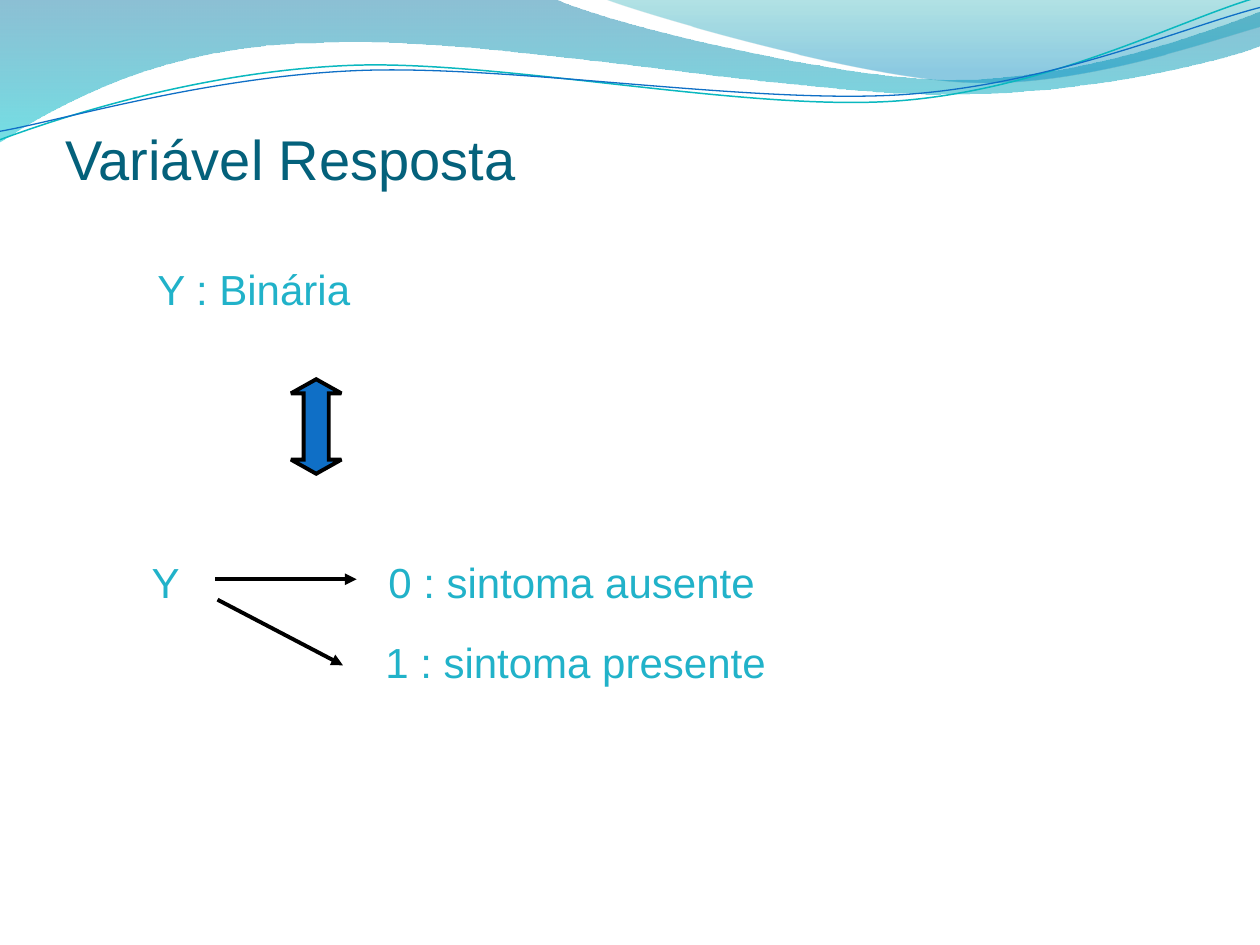
from dataclasses import dataclass

from lxml.etree import SubElement
from pptx import Presentation
from pptx.dml.color import RGBColor
from pptx.enum.shapes import MSO_CONNECTOR, MSO_SHAPE
from pptx.oxml.ns import qn
from pptx.util import Pt

Point = tuple[float, float]
Segment = tuple[Point, ...]  # one point: straight; three points: cubic curve


@dataclass(frozen=True)
class Theme:
    font: str = "Arial"
    title_size: float = 32
    body_size: float = 24
    title: str = "04617B"
    body: str = "21B2C9"
    blue: str = "0F6FC6"
    teal: str = "0AB8BF"
    ink: str = "000000"
    stroke: float = 2.25


@dataclass(frozen=True)
class Stop:
    position: float
    color: str
    opacity: int  # percent


@dataclass(frozen=True)
class Band:
    start: Point
    segments: tuple[Segment, ...]
    stops: tuple[Stop, Stop]


@dataclass(frozen=True)
class Wave:
    start: Point
    segments: tuple[Segment, ...]
    color: str
    width: float
    rotation: float = 357.3


THEME = Theme()

BANDS = (
    Band((0, -0.7), (
        ((316.8, -0.7),),
        ((342.7, 12.2), (478.1, 45.4), (545.8, 45.4)),
        ((614.2, 45.4), (689.8, 18.7), (720, 6.5)),
        ((720.7, 25.9),),
        ((707.8, 31.7), (626.4, 54.7), (537.1, 54)),
        ((447.8, 54), (275, 20.2), (185, 24.5)),
        ((92.9, 25.2), (33.1, 59.8), (-0.7, 81.4)),
    ), (Stop(0, "0074A1", 45), Stop(1, "00C6CF", 55))),
    Band((344.9, -0.7), (
        ((366.5, 7.9), (491, 44.6), (553.7, 46.8)),
        ((616.3, 49.7), (691.9, 23), (720, 15.1)),
        ((720, 0),),
    ), (Stop(0, "00A1A9", 30), Stop(0.8, "008BBF", 45))),
)

WAVES = (
    Wave((-1.4, 62.9), (
        ((33.8, 51.7), (114.1, 29.4), (199.8, 29.9)),
        ((284.9, 30.3), (425.8, 67.3), (512.4, 64.9)),
        ((599, 62.4), (676.5, 25.7), (720.2, 15.5)),
    ), THEME.teal, 0.85),
    Wave((-1.1, 58), (
        ((32.9, 53.8), (118.3, 32.5), (204.1, 33)),
        ((290.6, 33.4), (428.9, 63.1), (515.5, 61.4)),
        ((601.3, 59.6), (678.4, 30.1), (721.4, 21.3)),
    ), THEME.blue, 0.75),
)


def rgb(color: str) -> RGBColor:
    return RGBColor.from_string(color)


def add_outline(page, start: Point, segments: tuple[Segment, ...], close: bool):
    """Lay out every point as a line, then fold each group of three into a cubic curve."""
    builder = page.shapes.build_freeform(Pt(start[0]), Pt(start[1]), scale=1.0)
    points = [(Pt(x), Pt(y)) for segment in segments for x, y in segment]
    builder.add_line_segments(points, close=close)
    shape = builder.convert_to_shape()
    shape.shadow.inherit = False
    lines = iter(list(shape._element.spPr.iter(qn("a:lnTo"))))
    for segment in segments:
        group = [next(lines) for _ in segment]
        if len(group) == 3:
            group[0].tag = qn("a:cubicBezTo")
            for line in group[1:]:
                group[0].append(line[0])
                line.getparent().remove(line)
    return shape


def add_band(page, band: Band) -> None:
    shape = add_outline(page, band.start, band.segments, close=True)
    shape.line.fill.background()
    shape.fill.gradient()
    shape.fill.gradient_angle = 270
    for target, stop in zip(shape.fill.gradient_stops, band.stops):
        target.position = stop.position
        target.color.rgb = rgb(stop.color)
    colors = shape._element.spPr.iter(qn("a:srgbClr"))
    for color, stop in zip(list(colors), band.stops):
        SubElement(color, qn("a:alpha"), val=str(stop.opacity * 1000))


def add_wave(page, wave: Wave) -> None:
    shape = add_outline(page, wave.start, wave.segments, close=False)
    shape.rotation = wave.rotation
    shape.fill.background()
    shape.line.color.rgb = rgb(wave.color)
    shape.line.width = Pt(wave.width)


def add_text(page, text: str, *, left: float, top: float, width: float, height: float = 36,
             size: float = THEME.body_size, color: str = THEME.body,
             tab: float | None = None) -> None:
    box = page.shapes.add_textbox(Pt(left), Pt(top), Pt(width), Pt(height))
    frame = box.text_frame
    frame.word_wrap = True
    para = frame.paragraphs[0]
    if tab is not None:
        tabs = SubElement(para._p.get_or_add_pPr(), qn("a:tabLst"))
        SubElement(tabs, qn("a:tab"), pos=str(Pt(tab)), algn="l")
    span = para.add_run()
    span.text = text
    span.font.name = THEME.font
    span.font.size = Pt(size)
    span.font.color.rgb = rgb(color)


def add_arrow(page, start: Point, end: Point) -> None:
    arrow = page.shapes.add_connector(MSO_CONNECTOR.STRAIGHT, *map(Pt, start + end))
    arrow.line.color.rgb = rgb(THEME.ink)
    arrow.line.width = Pt(THEME.stroke)
    line = arrow.line._get_or_add_ln()
    line.set("cap", "sq")
    SubElement(line, qn("a:tailEnd"), type="triangle")
    SubElement(arrow._element.spPr, qn("a:effectLst"))


def add_double_arrow(page, left: float, top: float, width: float, height: float) -> None:
    shape = page.shapes.add_shape(MSO_SHAPE.UP_DOWN_ARROW, Pt(left), Pt(top), Pt(width), Pt(height))
    shape.adjustments[0] = 0.5
    shape.adjustments[1] = 0.28
    # Give the two guides their distinct preset names
    for number, guide in enumerate(shape._element.spPr.iter(qn("a:gd")), start=1):
        guide.set("name", f"adj{number}")
    shape.shadow.inherit = False
    shape.fill.solid()
    shape.fill.fore_color.rgb = rgb(THEME.blue)
    shape.line.color.rgb = rgb(THEME.ink)
    shape.line.width = Pt(THEME.stroke)
    SubElement(shape.line._get_or_add_ln(), qn("a:miter"), lim="800000")


def main() -> None:
    deck = Presentation()
    deck.slide_width, deck.slide_height = Pt(720), Pt(540)
    page = deck.slides.add_slide(deck.slide_layouts[6])

    # Decorated top edge
    for band in BANDS:
        add_band(page, band)
    for wave in WAVES:
        add_wave(page, wave)

    # Title and variable
    add_text(page, "Variável Resposta", left=30.2, top=67.7, width=666, height=66.2,
             size=THEME.title_size, color=THEME.title)
    add_text(page, "Y : Binária", left=82.8, top=147, width=191.5)
    add_double_arrow(page, 166.3, 216.7, 28.8, 54)

    # The two values of Y
    add_text(page, "Y\t0 : sintoma ausente", left=79.6, top=314.4, width=440, tab=135.2)
    add_arrow(page, (123.8, 331), (203.8, 331))
    add_arrow(page, (125.3, 343.2), (196, 380.2))
    add_text(page, "1 : sintoma presente", left=213.1, top=360, width=312.5)

    deck.save("out.pptx")


if __name__ == "__main__":
    main()
